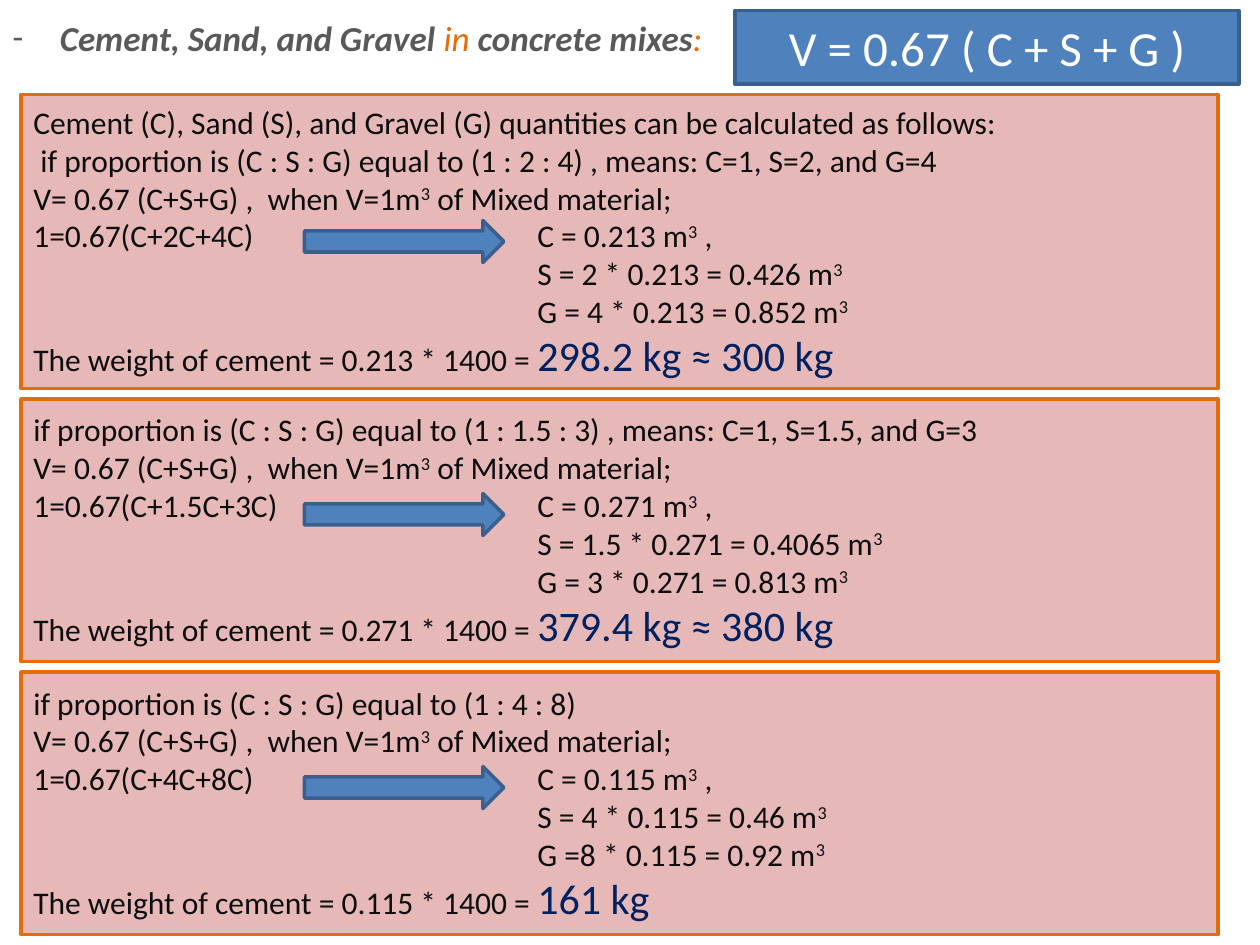
from pptx import Presentation
from pptx.dml.color import RGBColor
from pptx.enum.shapes import MSO_SHAPE as Kind
from pptx.enum.text import MSO_ANCHOR as Anchor, MSO_AUTO_SIZE as Fit, PP_ALIGN as Align
from pptx.oxml.ns import qn
from pptx.util import Pt
from lxml import etree

INK, NAVY, GREY, ORANGE = "0D0D0D", "002060", "595959", "E46C0A"
PINK, BLUE, EDGE = "E6B9B8", "4F81BD", "3A5F8C"


def add_run(para, text, size, color):
    run = para.add_run()
    run.text = text
    run.font.name = "Calibri"
    run.font.size = Pt(size)
    run.font.color.rgb = RGBColor.from_string(color)
    return run


def add_box(kind, left, top, width, height, fill, edge):
    box = slide.shapes.add_shape(kind, Pt(left), Pt(top), Pt(width), Pt(height))
    box.shadow.inherit = False
    box.fill.solid()
    box.fill.fore_color.rgb = RGBColor.from_string(fill)
    box.line.color.rgb = RGBColor.from_string(edge)
    box.line.width = Pt(2)
    return box


prs = Presentation()
prs.slide_width, prs.slide_height = Pt(720), Pt(540)
slide = prs.slides.add_slide(prs.slide_layouts[5])

# Title with a dash bullet
title = slide.shapes.title
title.left, title.top, title.width, title.height = Pt(0), Pt(6), Pt(720), Pt(42)
frame = title.text_frame
frame.vertical_anchor = Anchor.TOP
frame.auto_size = Fit.NONE
para = frame.paragraphs[0]
para.alignment = Align.JUSTIFY
props = para._p.get_or_add_pPr()
props.set("marL", str(Pt(27)))
props.set("indent", str(-Pt(27)))
etree.SubElement(props, qn("a:buFont")).set("typeface", "Calibri")
etree.SubElement(props, qn("a:buChar")).set("char", "-")
for text, color, bold in [
    ("Cement, Sand, and Gravel", GREY, True),
    (" in ", ORANGE, False),
    ("concrete mixes", GREY, True),
    (":", ORANGE, False),
]:
    run = add_run(para, text, 20, color)
    run.font.bold = bold
    run.font.italic = True

# Formula
rule = add_box(Kind.RECTANGLE, 420, 6, 288, 42, BLUE, EDGE)
para = rule.text_frame.paragraphs[0]
para.alignment = Align.CENTER
add_run(para, "V = 0.67 ( C + S + G )", 28, "FFFFFF")

# Each mix: top, height, arrow top, opening lines, sum, C, S, G, weight
mixes = [
    (54, 168, 126,
     ["Cement (C), Sand (S), and Gravel (G) quantities can be calculated as follows:",
      " if proportion is (C : S : G) equal to (1 : 2 : 4) , means: C=1, S=2, and G=4"],
     "C+2C+4C", "0.213", "S = 2 * 0.213 = 0.426", "G = 4 * 0.213 = 0.852",
     "298.2 kg ≈ 300 kg"),
    (228, 150, 282,
     ["if proportion is (C : S : G) equal to (1 : 1.5 : 3) , means: C=1, S=1.5, and G=3"],
     "C+1.5C+3C", "0.271", "S = 1.5 * 0.271 = 0.4065", "G = 3 * 0.271 = 0.813",
     "379.4 kg ≈ 380 kg"),
    (384, 150, 438,
     ["if proportion is (C : S : G) equal to (1 : 4 : 8)"],
     "C+4C+8C", "0.115", "S = 4 * 0.115 = 0.46", "G =8 * 0.115 = 0.92",
     "161 kg"),
]
for top, height, mid, intro, total, cement, sand, gravel, weight in mixes:
    panel = add_box(Kind.RECTANGLE, 12, top, 684, height, PINK, ORANGE)
    frame = panel.text_frame
    frame.word_wrap = True
    frame.vertical_anchor = Anchor.MIDDLE
    lines = intro + [
        "V= 0.67 (C+S+G) ,  when V=1m^3 of Mixed material;",
        f"1=0.67({total})\tC = {cement} m^3 ,",
        f"\t{sand} m^3",
        f"\t{gravel} m^3",
        f"The weight of cement = {cement} * 1400 = ",
    ]
    for i, line in enumerate(lines):
        para = frame.add_paragraph() if i else frame.paragraphs[0]
        para.alignment = Align.LEFT
        if "\t" in line:
            # One tab stop lines up the results right of the arrow
            stops = etree.SubElement(para._p.get_or_add_pPr(), qn("a:tabLst"))
            stop = etree.SubElement(stops, qn("a:tab"))
            stop.set("pos", str(Pt(288)))
            stop.set("algn", "l")
        head, power, tail = line.partition("^3")
        add_run(para, head, 18, INK)
        if power:
            cube = add_run(para, "3", 18, INK)
            cube._r.get_or_add_rPr().set("baseline", "30000")
        if tail:
            add_run(para, tail, 18, INK)
    add_run(para, weight, 24, NAVY)
    add_box(Kind.RIGHT_ARROW, 174, mid, 114, 24, BLUE, EDGE)

prs.save("out.pptx")
